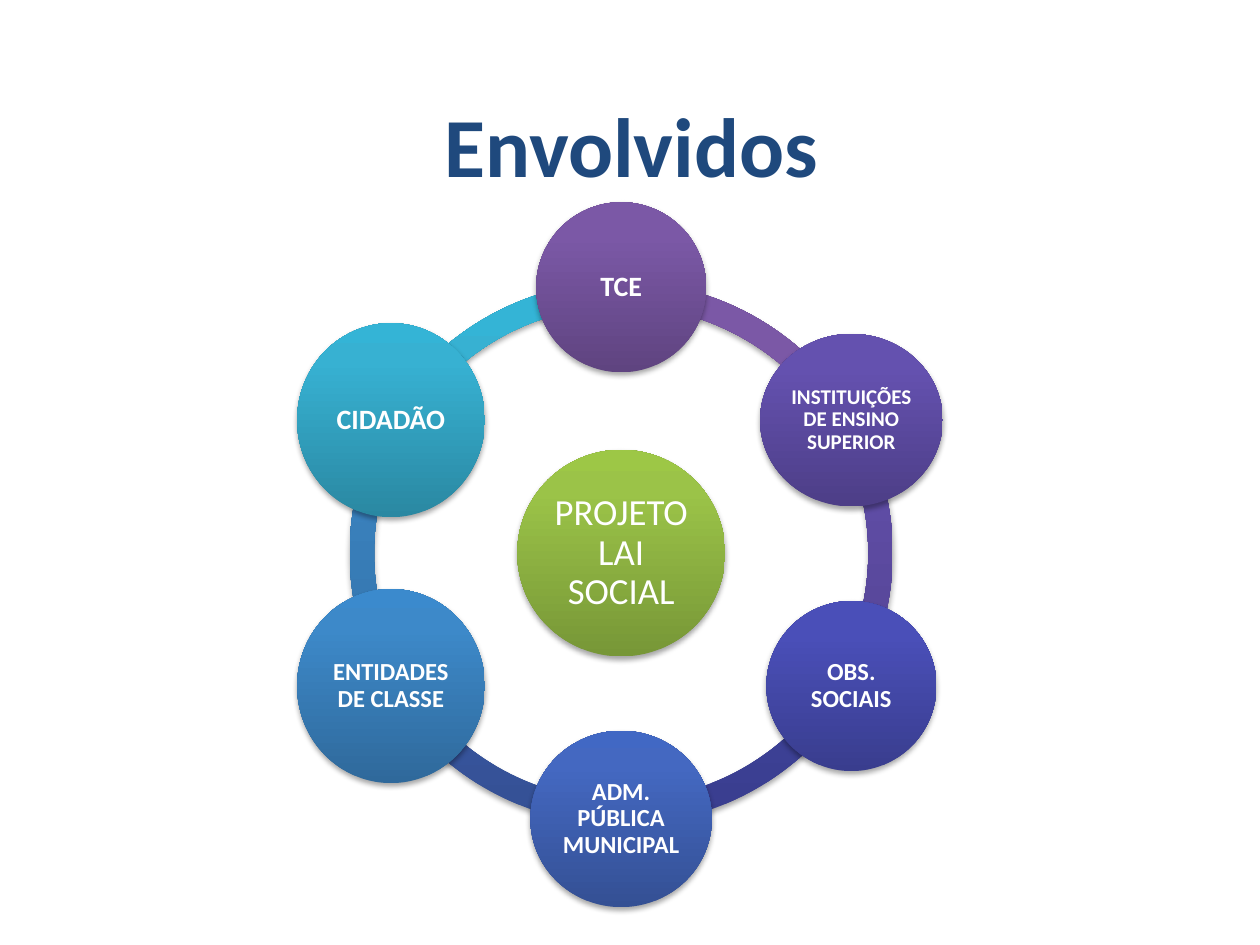
"""Build the slide showing who takes part in the project, as a ring of circles."""
import math
from lxml import etree
from pptx import Presentation, util as u
from pptx.dml.color import RGBColor
from pptx.enum import shapes, text
from pptx.oxml import parse_xml
from pptx.oxml.ns import qn

prs = Presentation()
prs.slide_width, prs.slide_height = u.Inches(10), u.Inches(7.5)
COL, ROW = prs.slide_width / 10, prs.slide_height / 7.5
slide = prs.slides.add_slide(prs.slide_layouts[6])
NS = "http://schemas.openxmlformats.org/drawingml/2006/main"


def add_round(kind, cx, cy, w, h, stops):
    s = slide.shapes.add_shape(
        kind, *(round(v) for v in ((cx - w / 2) * COL, (cy - h / 2) * ROW, w * COL, h * ROW)))
    s.line.fill.background()
    s.shadow.inherit = False
    gs = "".join(f'<a:gs pos="{pos}000"><a:srgbClr val="{c}"/></a:gs>'
                 for pos, c in zip((0, 80, 100), stops))
    pr = s.fill._xPr
    pr.find(qn("a:ln")).addprevious(parse_xml(
        f'<a:gradFill xmlns:a="{NS}" rotWithShape="1"><a:gsLst>{gs}</a:gsLst>'
        '<a:lin ang="16200000" scaled="0"/></a:gradFill>'))
    shadow = etree.SubElement(pr.find(qn("a:effectLst")), qn("a:outerShdw"),
                              blurRad="40000", dist="23000", dir="5400000", rotWithShape="0")
    color = etree.SubElement(shadow, qn("a:srgbClr"), val="000000")
    etree.SubElement(color, qn("a:alpha"), val="35000")
    return s


def write(s, words, size, color, bold, inset, spacing):
    tf = s.text_frame
    frame = {"word_wrap": True, "vertical_anchor": text.MSO_ANCHOR.MIDDLE}
    frame.update({f"margin_{side}": u.Inches(inset) for side in ("left", "right", "top", "bottom")})
    for k, v in frame.items():
        setattr(tf, k, v)
    p = tf.paragraphs[0]
    p.alignment, p.line_spacing = text.PP_ALIGN.CENTER, spacing
    r = p.add_run()
    r.text = words
    for k, v in {"name": "Calibri", "size": u.Pt(size), "bold": bold}.items():
        setattr(r.font, k, v)
    r.font.color.rgb = RGBColor.from_string(color)


title = slide.shapes.add_textbox(*(round(v) for v in (0.51 * COL, 0.52 * ROW, 9 * COL, 1.25 * ROW)))
write(title, "Envolvidos", 48, "1F497D", True, 0.05, 1.0)

CX, CY, RING, ORBIT = 4.93, 4.39, 4.31, 2.11
nodes = [
    ("TCE", 16, 1.35, 1.35, ("5F4480", "7B58A6", "7C57A8")),
    ("INSTITUIÇÕES DE ENSINO SUPERIOR", 12, 1.45, 1.37, ("4D3E87", "6451AF", "6450B2")),
    ("OBS. SOCIAIS", 14, 1.35, 1.35, ("393D8E", "4A4FB8", "484EBB")),
    ("ADM. PÚBLICA MUNICIPAL", 14, 1.44, 1.4, ("345094", "4468C1", "4168C4")),
    ("ENTIDADES DE CLASSE", 14, 1.49, 1.54, ("2F699B", "3D89C9", "3B8ACD")),
    ("CIDADÃO", 16, 1.49, 1.54, ("2A88A2", "37B1D2", "34B4D6")),
]
STEP = 360 / len(nodes)
angles = [(270 + i * STEP) % 360 for i in range(len(nodes))]

for angle, node in reversed(list(zip(angles, nodes))):
    s = add_round(shapes.MSO_SHAPE.BLOCK_ARC, CX, CY, RING, RING, node[-1])
    for i, v in enumerate((angle * 0.6, (angle + STEP) % 360 * 0.6, 0.045)):
        s.adjustments[i] = v

hub = add_round(shapes.MSO_SHAPE.OVAL, CX, CY, 1.65, 1.64, ("779737", "9BC348", "9DC746"))
write(hub, "PROJETO LAI SOCIAL", 21, "FFFFFF", False, 0.03, 0.9)

for angle, (words, size, w, h, stops) in zip(angles, nodes):
    turn = math.radians(angle)
    s = add_round(shapes.MSO_SHAPE.OVAL, CX + ORBIT * math.cos(turn),
                  CY + ORBIT * math.sin(turn), w, h, stops)
    write(s, words, size, "FFFFFF", True, 0.02, 0.9)

prs.save("out.pptx")
